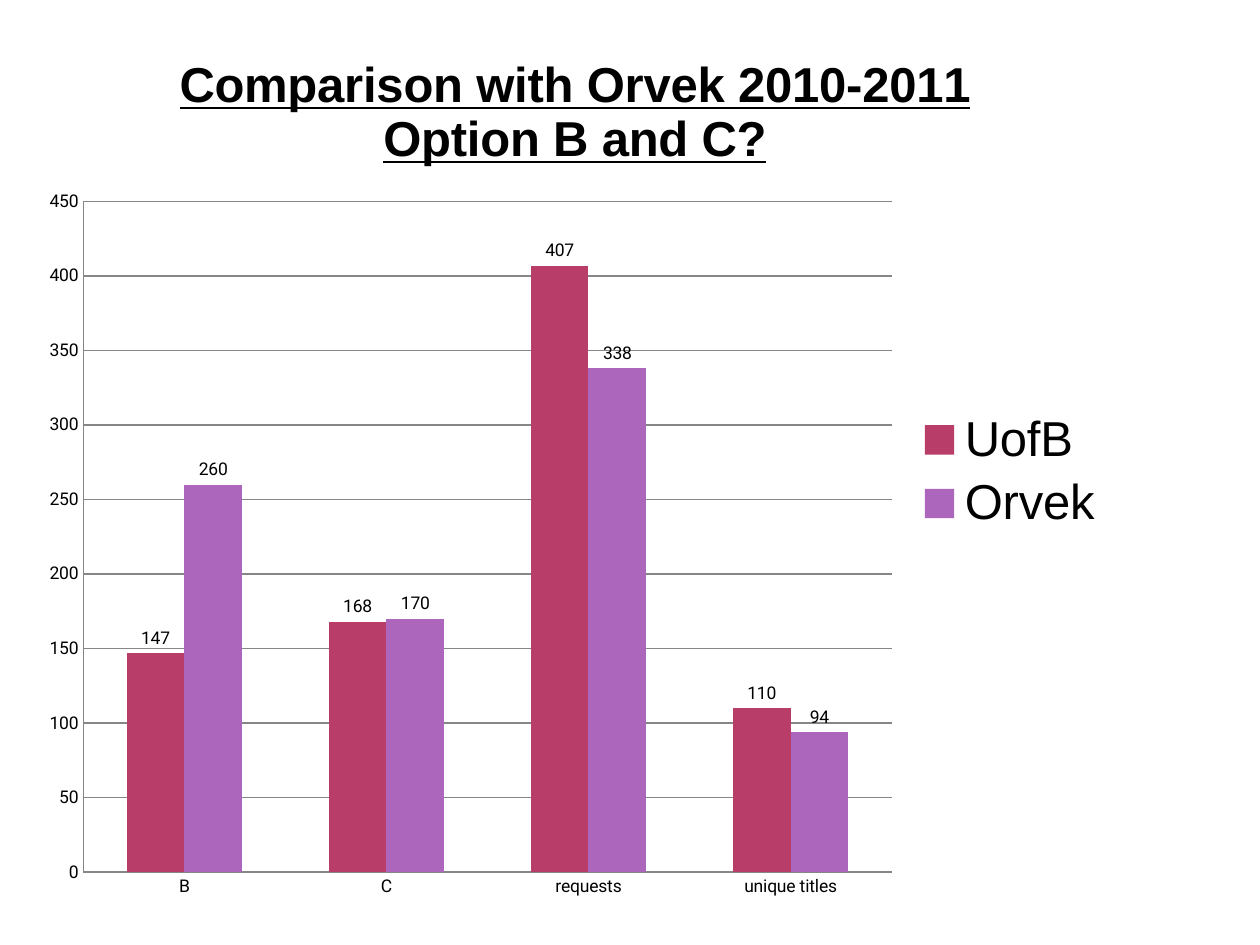
from lxml.etree import SubElement
from pptx import Presentation
from pptx.chart.data import CategoryChartData
from pptx.dml.color import RGBColor
from pptx.enum.chart import XL_CHART_TYPE, XL_LABEL_POSITION, XL_LEGEND_POSITION, XL_TICK_MARK
from pptx.oxml.ns import qn
from pptx.util import Cm, Pt

BLACK = RGBColor(0x00, 0x00, 0x00)
GRAY = RGBColor(0x86, 0x86, 0x86)
CRIMSON = RGBColor(0xB8, 0x3D, 0x68)
PURPLE = RGBColor(0xAC, 0x66, 0xBB)

CATEGORIES = ["B", "C", "requests", "unique titles"]
SERIES = [
    ("UofB", [147, 168, 407, 110], CRIMSON),
    ("Orvek", [260, 170, 338, 94], PURPLE),
]
TITLE_LINES = ["Comparison with Orvek 2010-2011", "Option B and C?"]
PLOT_AREA = {"x": 0.05, "y": 0.195, "w": 0.74, "h": 0.757}


class SlideBuilder:
    """Holds the text styles and the current slide."""

    styles = {
        "chart": {"name": "Roboto", "size": Pt(10), "bold": False},
        "title": {"name": "Arial", "size": Pt(28), "bold": True, "underline": True},
        "legend": {"name": "Arial", "size": Pt(28), "bold": False},
    }

    def __init__(self, slide):
        self.slide = slide

    def format_font(self, font, style):
        for attribute, value in self.styles[style].items():
            setattr(font, attribute, value)
        font.color.rgb = BLACK

    def add_column_chart(self, left, top, width, height):
        data = CategoryChartData()
        data.categories = CATEGORIES
        for name, values, _ in SERIES:
            data.add_series(name, values)
        chart = self.slide.shapes.add_chart(
            XL_CHART_TYPE.COLUMN_CLUSTERED, left, top, width, height, data
        ).chart
        self.format_font(chart.font, "chart")
        return chart

    def style_columns(self, chart):
        plot = chart.plots[0]
        plot.gap_width = 150
        plot.overlap = 0
        plot.vary_by_categories = False
        for series, (_, _, color) in zip(plot.series, SERIES):
            series.format.fill.solid()
            series.format.fill.fore_color.rgb = color
            labels = series.data_labels
            labels.show_value = True
            labels.position = XL_LABEL_POSITION.OUTSIDE_END
            self.format_font(labels.font, "chart")

    def style_axes(self, chart):
        for axis in (chart.category_axis, chart.value_axis):
            axis.major_tick_mark = XL_TICK_MARK.NONE
            axis.minor_tick_mark = XL_TICK_MARK.NONE
            axis.format.line.color.rgb = GRAY
        value_axis = chart.value_axis
        value_axis.minimum_scale = 0
        value_axis.maximum_scale = 450
        value_axis.major_unit = 50
        value_axis.major_gridlines.format.line.color.rgb = GRAY

    def add_title(self, chart, lines):
        text_frame = chart.chart_title.text_frame
        text_frame.text = "\n".join(lines)
        for paragraph in text_frame.paragraphs:
            self.format_font(paragraph.font, "title")
            for run in paragraph.runs:
                self.format_font(run.font, "title")
        chart.chart_title.include_in_layout = False

    def add_legend(self, chart):
        chart.has_legend = True
        chart.legend.position = XL_LEGEND_POSITION.RIGHT
        chart.legend.include_in_layout = False
        self.format_font(chart.legend.font, "legend")

    def place_plot_area(self, chart, fractions):
        plot_area = chart.plots[0]._element.getparent()
        layout = plot_area.find(qn("c:layout"))
        if layout is None:
            layout = plot_area.makeelement(qn("c:layout"))
            plot_area.insert(0, layout)
        manual = SubElement(layout, qn("c:manualLayout"))
        settings = {"layoutTarget": "inner", "xMode": "edge", "yMode": "edge", **fractions}
        for tag, value in settings.items():
            SubElement(manual, qn(f"c:{tag}")).set("val", str(value))


def main():
    presentation = Presentation()
    presentation.slide_width = Cm(25.4)
    presentation.slide_height = Cm(19.05)
    slide = presentation.slides.add_slide(presentation.slide_layouts[6])
    builder = SlideBuilder(slide)

    # Chart with its columns and axes
    chart = builder.add_column_chart(Cm(0.58), Cm(0.58), Cm(22.02), Cm(17.86))
    builder.style_columns(chart)
    builder.style_axes(chart)

    # Title, legend and plot position
    builder.add_title(chart, TITLE_LINES)
    builder.add_legend(chart)
    builder.place_plot_area(chart, PLOT_AREA)

    presentation.save("out.pptx")


if __name__ == "__main__":
    main()
